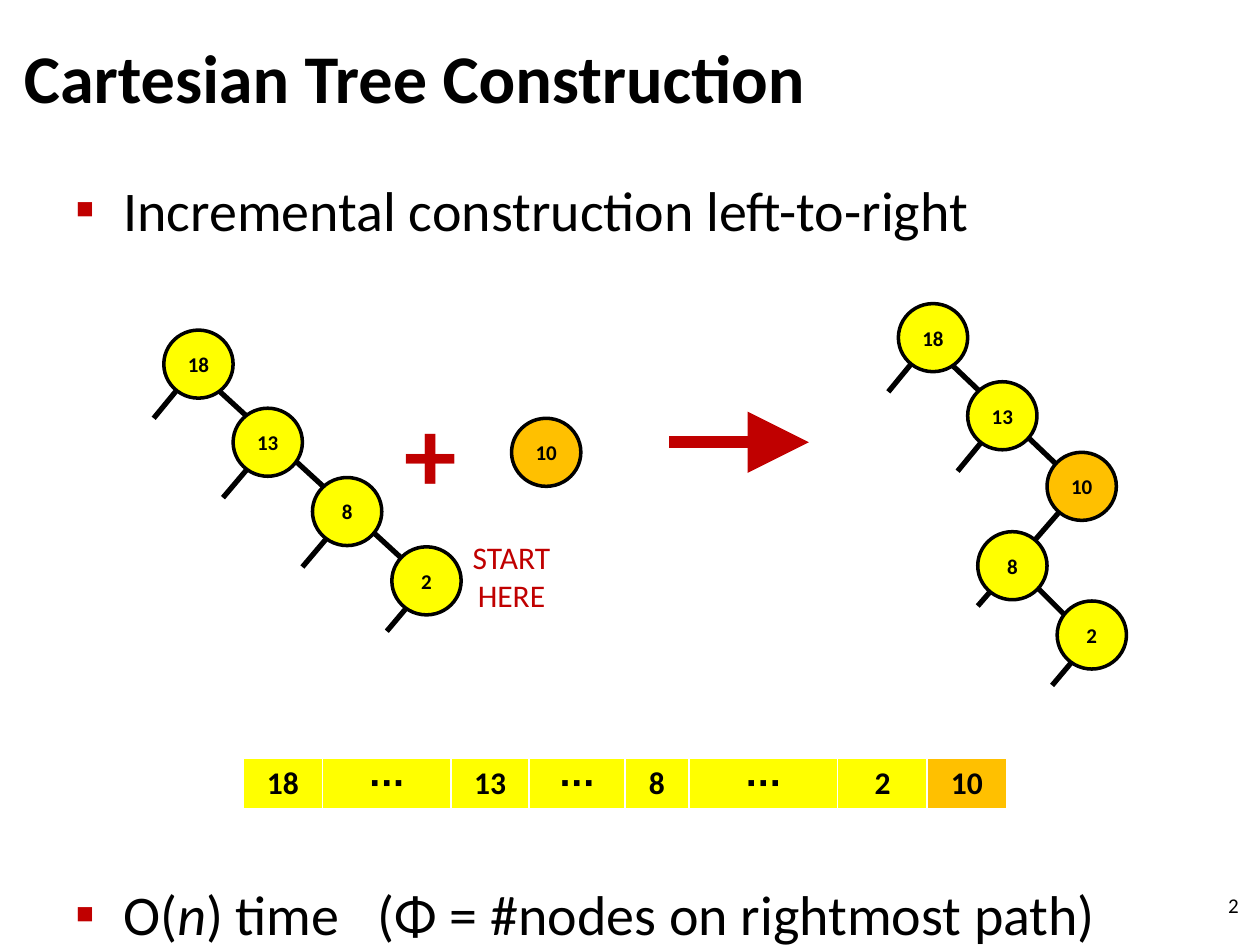
import pptx
import pptx.util
import pptx.dml.color
import pptx.enum.shapes
import pptx.enum.text
import pptx.oxml
import pptx.oxml.ns

PX = 9144
THEME = {
    "font": "Calibri",
    "ink": "000000", "accent": "C00000", "plain": "FFFF00", "added": "FFC000", "rule": "FFFFFF",
    "title": 39, "body": 32, "plus": 60, "label": 18, "node": 12,
}
SHAPE = pptx.enum.shapes.MSO_SHAPE
ALIGN = pptx.enum.text.PP_ALIGN
ANCHOR = pptx.enum.text.MSO_ANCHOR
NAMESPACE = pptx.oxml.ns.nsdecls("a")


def write(para, text, size, color="ink", **extra):
    span = para.add_run()
    span.text = text
    span.font.color.rgb = pptx.dml.color.RGBColor.from_string(THEME[color])
    formats = {"name": THEME["font"], "size": pptx.util.Pt(THEME[size]), **extra}
    for name, value in formats.items():
        setattr(span.font, name, value)
    return span


def connect(shapes, ends, width=3, color="ink"):
    line = shapes.add_connector(pptx.enum.shapes.MSO_CONNECTOR.STRAIGHT, *[end * PX for end in ends])
    line.line.width = pptx.util.Pt(width)
    line.line.color.rgb = pptx.dml.color.RGBColor.from_string(THEME[color])
    line._element.spPr.append(pptx.oxml.parse_xml(f"<a:effectLst {NAMESPACE}/>"))
    return line


deck = pptx.Presentation()
deck.slide_width, deck.slide_height = 1000 * PX, 750 * PX
page = deck.slides.add_slide(deck.slide_layouts[5])

title = page.shapes.title
for name, value in {"left": 9, "top": 29, "width": 900, "height": 71}.items():
    setattr(title, name, value * PX)
frame_format = {
    "word_wrap": True,
    "auto_size": pptx.enum.text.MSO_AUTO_SIZE.NONE,
    "vertical_anchor": ANCHOR.MIDDLE,
}
for name, value in frame_format.items():
    setattr(title.text_frame, name, value)
para = title.text_frame.paragraphs[0]
para.alignment = ALIGN.LEFT
para.line_spacing = 0.9
write(para, "Cartesian Tree Construction", "title", bold=True)

body = page.shapes.add_textbox(50 * PX, 134 * PX, 900 * PX, 635 * PX)
body.text_frame.word_wrap = True
points = [
    (2, [("Incremental construction left-to-right", False, 0)]),
    (364, [("O(", False, 0), ("n", True, 0), (") time", False, 0), (" ", False, 1450),
           ("(Φ = #nodes on rightmost path)", False, 0)]),
]
for index, (gap, spans) in enumerate(points):
    para = body.text_frame.add_paragraph() if index else body.text_frame.paragraphs[0]
    para.space_before = pptx.util.Pt(gap)
    for text, italic, spacing in spans:
        span = write(para, text, "body", italic=italic)
        if spacing:
            span.font._element.set("spc", str(spacing))
    properties = para._p.get_or_add_pPr()
    for name, value in {"marL": 38, "indent": -38}.items():
        properties.set(name, str(value * PX))
    for bullet in (
        f'<a:buClr {NAMESPACE}><a:srgbClr val="{THEME["accent"]}"/></a:buClr>',
        f'<a:buFont {NAMESPACE} typeface="{THEME["font"]}"/>',
        f'<a:buChar {NAMESPACE} char="▪"/>',
    ):
        properties.append(pptx.oxml.parse_xml(bullet))

labels = [
    ("2", (760, 698, 233, 40), ALIGN.RIGHT, ANCHOR.MIDDLE, "node", "ink", False),
    ("+", (311, 303, 79, 111), ALIGN.LEFT, ANCHOR.TOP, "plus", "accent", True),
    ("START HERE", (343, 422, 126, 71), ALIGN.CENTER, ANCHOR.TOP, "label", "accent", False),
]
for text, place, align, anchor, size, color, bold in labels:
    box = page.shapes.add_textbox(*[length * PX for length in place])
    box.text_frame.word_wrap = True
    box.text_frame.vertical_anchor = anchor
    para = box.text_frame.paragraphs[0]
    para.alignment = align
    write(para, text, size, color, bold=bold)

columns = [("18", 63), ("∙∙∙", 102), ("13", 62), ("∙∙∙", 76), ("8", 51), ("∙∙∙", 118), ("2", 71), ("10", 63)]
table = page.shapes.add_table(1, len(columns), 193 * PX, 602 * PX, 606 * PX, 41 * PX).table
table.first_row = table.horz_banding = False
for index, (text, width) in enumerate(columns):
    table.columns[index].width = width * PX
    cell = table.cell(0, index)
    for side, weight in {"L": 1, "R": 1, "T": 1, "B": 3}.items():
        cell._tc.get_or_add_tcPr().append(pptx.oxml.parse_xml(
            f'<a:ln{side} {NAMESPACE} w="{pptx.util.Pt(weight)}"><a:solidFill>'
            f'<a:srgbClr val="{THEME["rule"]}"/></a:solidFill></a:ln{side}>'))
    cell.fill.solid()
    cell.fill.fore_color.rgb = pptx.dml.color.RGBColor.from_string(THEME["added" if text == "10" else "plain"])
    para = cell.text_frame.paragraphs[0]
    para.alignment = ALIGN.CENTER
    write(para, text, "label", bold=True)

tree_before = (
    [(154, 293, 122, 332), (210, 356, 177, 395), (273, 411, 240, 450), (339, 463, 307, 501),
     (154, 292, 335, 458)],
    [("18", 130, 262), ("13", 185, 324), ("8", 248, 379), ("2", 311, 434)],
)
new_node = ([], [("10", 406, 332)])
tree_after = (
    [(807, 450, 862, 505), (737, 272, 705, 311), (792, 335, 760, 374), (854, 391, 776, 481),
     (736, 271, 862, 391), (867, 506, 835, 544)],
    [("18", 713, 241), ("13", 768, 303), ("10", 831, 359), ("8", 776, 422), ("2", 839, 477)],
)
for edges, nodes in (tree_before, new_node, tree_after):
    group = page.shapes.add_group_shape() if edges else page
    for edge in edges:
        connect(group.shapes, edge)
    for text, left, top in nodes:
        node = group.shapes.add_shape(SHAPE.OVAL, left * PX, top * PX, 55 * PX, 54 * PX)
        node.shadow.inherit = False
        node.fill.solid()
        node.fill.fore_color.rgb = pptx.dml.color.RGBColor.from_string(THEME["added" if text == "10" else "plain"])
        node.line.color.rgb = pptx.dml.color.RGBColor.from_string(THEME["ink"])
        node.line.width = pptx.util.Pt(2)
        frame = node.text_frame
        for side in ("left", "right", "top", "bottom"):
            setattr(frame, f"margin_{side}", 0)
        frame.vertical_anchor = ANCHOR.MIDDLE
        para = frame.paragraphs[0]
        para.alignment = ALIGN.CENTER
        write(para, text, "node", bold=True)

arrow = connect(page.shapes, (531, 351, 642, 351), 7, "accent")
arrow.line._get_or_add_ln().append(
    pptx.oxml.parse_xml(f'<a:tailEnd {NAMESPACE} type="triangle" w="lg" len="lg"/>'))

deck.save("out.pptx")
